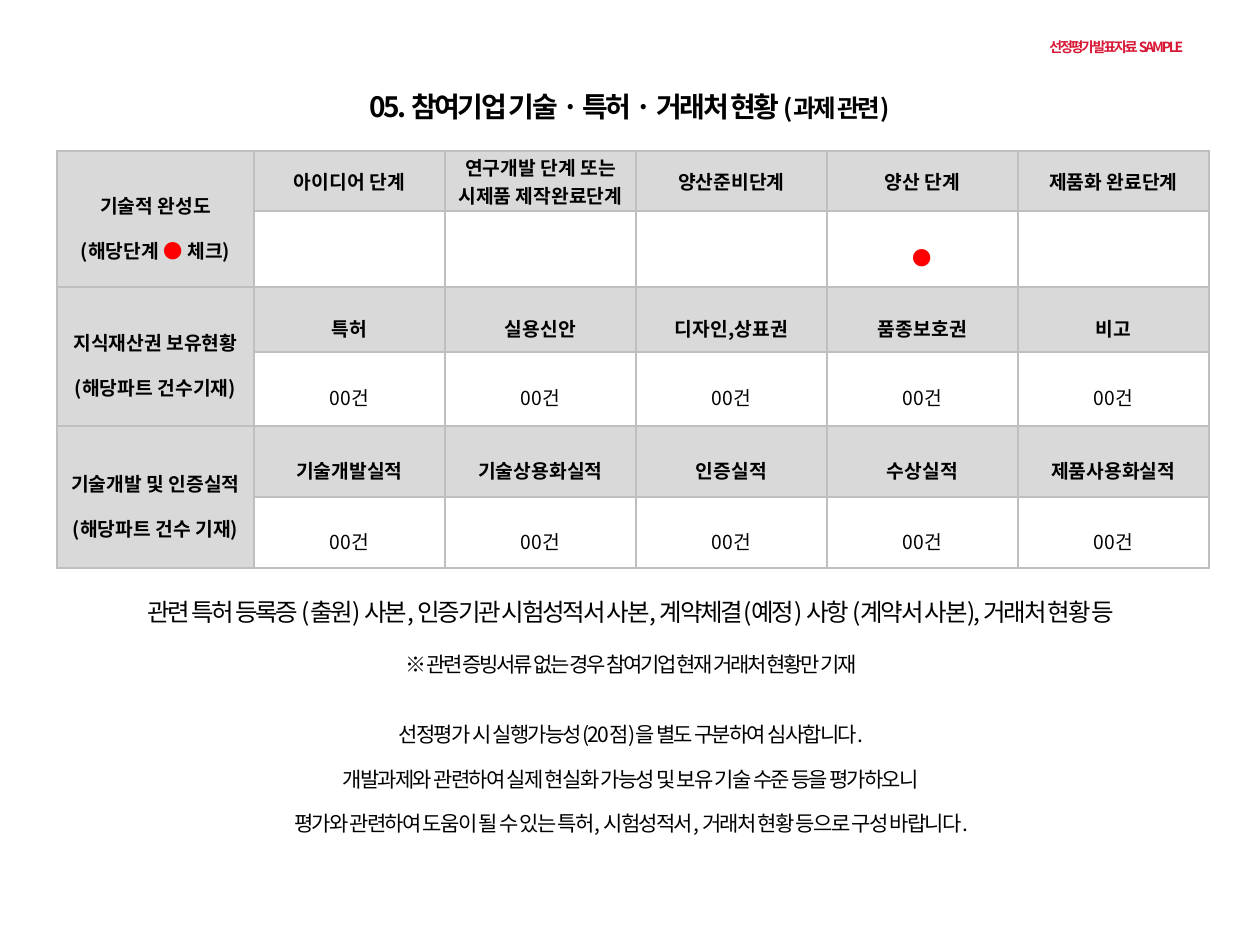
from lxml.etree import SubElement
from pptx import Presentation
from pptx.dml.color import RGBColor
from pptx.enum.text import MSO_ANCHOR as Anchor, MSO_AUTO_SIZE as AutoSize, PP_ALIGN as Align
from pptx.oxml.ns import qn
from pptx.util import Pt

PX = 914400 / 126
BLACK, RED, CRIMSON = "000000", "FF0000", "D71733"
GREY, WHITE, BORDER = "D9D9D9", "FFFFFF", "BFBFBF"


def px(length):
    return round(length * PX)


def color(value):
    return RGBColor.from_string(value)


def assign(target, values):
    for name, value in values.items():
        setattr(target, name, value)


class SlideBuilder:
    font_name = "Noto Sans CJK KR"

    def __init__(self, slide):
        self.slide = slide

    def place(self, shape, left, top, width, height):
        assign(shape, {"left": px(left), "top": px(top), "width": px(width), "height": px(height)})

    def run(self, paragraph, text, size, fill=BLACK, bold=False, spacing=0):
        run = paragraph.add_run()
        run.text = text
        assign(run.font, {"size": Pt(size), "bold": bold, "name": self.font_name})
        run.font.color.rgb = color(fill)
        properties = run.font._element
        SubElement(properties, qn("a:ea")).set("typeface", self.font_name)
        if spacing:
            properties.set("spc", str(round(spacing * 100)))

    def paragraphs(self, frame, lines, **paragraph_format):
        for index, runs in enumerate(lines):
            paragraph = frame.add_paragraph() if index else frame.paragraphs[0]
            assign(paragraph, {"alignment": Align.CENTER, **paragraph_format})
            for text, style in runs:
                self.run(paragraph, text, **style)

    def label(self, box, text, style):
        shape = self.slide.shapes.add_textbox(0, 0, 0, 0)
        self.place(shape, *box)
        assign(shape.text_frame, {"word_wrap": True, "auto_size": AutoSize.SHAPE_TO_FIT_TEXT})
        self.paragraphs(shape.text_frame, [[(text, style)]])

    def title(self, box, runs):
        shape = self.slide.shapes.title
        self.place(shape, *box)
        assign(shape.text_frame, {
            "word_wrap": False, "auto_size": AutoSize.NONE, "vertical_anchor": Anchor.MIDDLE,
            "margin_left": px(15), "margin_right": px(15),
            "margin_top": px(8), "margin_bottom": px(8)})
        self.paragraphs(shape.text_frame, [runs])

    def body(self, box, lines):
        shape = self.slide.placeholders[1]
        self.place(shape, *box)
        frame = shape.text_frame
        assign(frame, {"word_wrap": True, "auto_size": AutoSize.NONE, "vertical_anchor": Anchor.TOP})
        self.paragraphs(frame, [[(text, style)] for text, style, _ in lines])
        for paragraph, (_, _, gap) in zip(frame.paragraphs, lines):
            properties = paragraph._p.get_or_add_pPr()
            properties.set("marL", "0")
            properties.set("indent", "0")
            SubElement(properties, qn("a:buNone"))
            assign(paragraph, {"space_before": Pt(0), "space_after": Pt(gap)})

    def table(self, left, top, widths, heights):
        frame = self.slide.shapes.add_table(
            len(heights), len(widths), px(left), px(top), px(sum(widths)), px(sum(heights)))
        table = frame.table
        assign(table, {"first_row": False, "horz_banding": False})
        for column, width in zip(table.columns, widths):
            column.width = px(width)
        for row, height in zip(table.rows, heights):
            row.height = px(height)
        return table

    def cell(self, cell, lines, fill, line_spacing):
        assign(cell, {
            "vertical_anchor": Anchor.MIDDLE, "margin_left": px(1), "margin_right": px(1),
            "margin_top": px(1), "margin_bottom": px(1)})
        properties = cell._tc.get_or_add_tcPr()
        for side in ("a:lnL", "a:lnR", "a:lnT", "a:lnB"):
            line = SubElement(properties, qn(side), w=str(Pt(1)))
            SubElement(SubElement(line, qn("a:solidFill")), qn("a:srgbClr"), val=BORDER)
        cell.fill.solid()
        cell.fill.fore_color.rgb = color(fill)
        self.paragraphs(cell.text_frame, lines, line_spacing=line_spacing)


def main():
    presentation = Presentation()
    assign(presentation, {"slide_width": px(1260), "slide_height": px(945)})
    builder = SlideBuilder(presentation.slides.add_slide(presentation.slide_layouts[1]))

    builder.label((1027, 32, 179, 30), "선정평가 발표자료 SAMPLE",
                  {"size": 8, "fill": CRIMSON, "bold": True, "spacing": -1.3})
    heading = {"bold": True, "spacing": -1.3}
    builder.title((166, 77, 927, 58), [
        ("05. 참여기업 기술 · 특허 · 거래처 현황 ", {"size": 16, **heading}),
        ("(과제 관련)", {"size": 14, **heading})])

    note = {"size": 12, "spacing": -1}
    builder.body((71, 591, 1120, 281), [
        ("관련 특허 등록증 (출원) 사본, 인증기관 시험성적서 사본, 계약체결(예정) 사항 (계약서 사본), 거래처 현황 등",
         {"size": 14, "spacing": -1.3}, 14),
        ("※ 관련 증빙서류 없는 경우 참여기업 현재 거래처 현황만 기재", {"size": 12, "spacing": -1.3}, 26),
        ("선정평가 시 실행가능성(20점)을 별도 구분하여 심사합니다.", note, 11),
        ("개발과제와 관련하여 실제 현실화 가능성 및 보유 기술 수준 등을 평가하오니", note, 11),
        ("평가와 관련하여 도움이 될 수 있는 특허, 시험성적서, 거래처 현황 등으로 구성 바랍니다.", note, 0)])

    strong = {"size": 11, "bold": True}
    plain = {"size": 11}
    mark = {"size": 11, "fill": RED}
    counts = [[("00건", plain)]] * 5
    sections = [
        ([[("기술적 완성도", strong)],
          [("(해당단계 ", strong), ("● ", mark), ("체크)", strong)]],
         ["아이디어 단계", "연구개발 단계 또는 시제품 제작완료단계", "양산준비단계", "양산 단계", "제품화 완료단계"],
         [[], [], [], [("●", mark)], []], 1.0),
        ([[("지식재산권 보유현황", strong)], [("(해당파트 건수기재)", strong)]],
         ["특허", "실용신안", "디자인,상표권", "품종보호권", "비고"], counts, 1.6),
        ([[("기술개발 및 인증실적", strong)], [("(해당파트 건수 기재)", strong)]],
         ["기술개발실적", "기술상용화실적", "인증실적", "수상실적", "제품사용화실적"], counts, 1.6)]

    table = builder.table(57, 151, [197] + [191] * 5, [60, 75, 65, 74, 71, 71])
    for index, (label, headers, values, header_spacing) in enumerate(sections):
        top = index * 2
        table.cell(top, 0).merge(table.cell(top + 1, 0))
        builder.cell(table.cell(top, 0), label, GREY, 1.6)
        builder.cell(table.cell(top + 1, 0), [], GREY, 1.6)
        for column, (header, value) in enumerate(zip(headers, values), 1):
            builder.cell(table.cell(top, column), [[(header, strong)]], GREY, header_spacing)
            builder.cell(table.cell(top + 1, column), [value], WHITE, 1.6)

    presentation.save("out.pptx")


if __name__ == "__main__":
    main()
